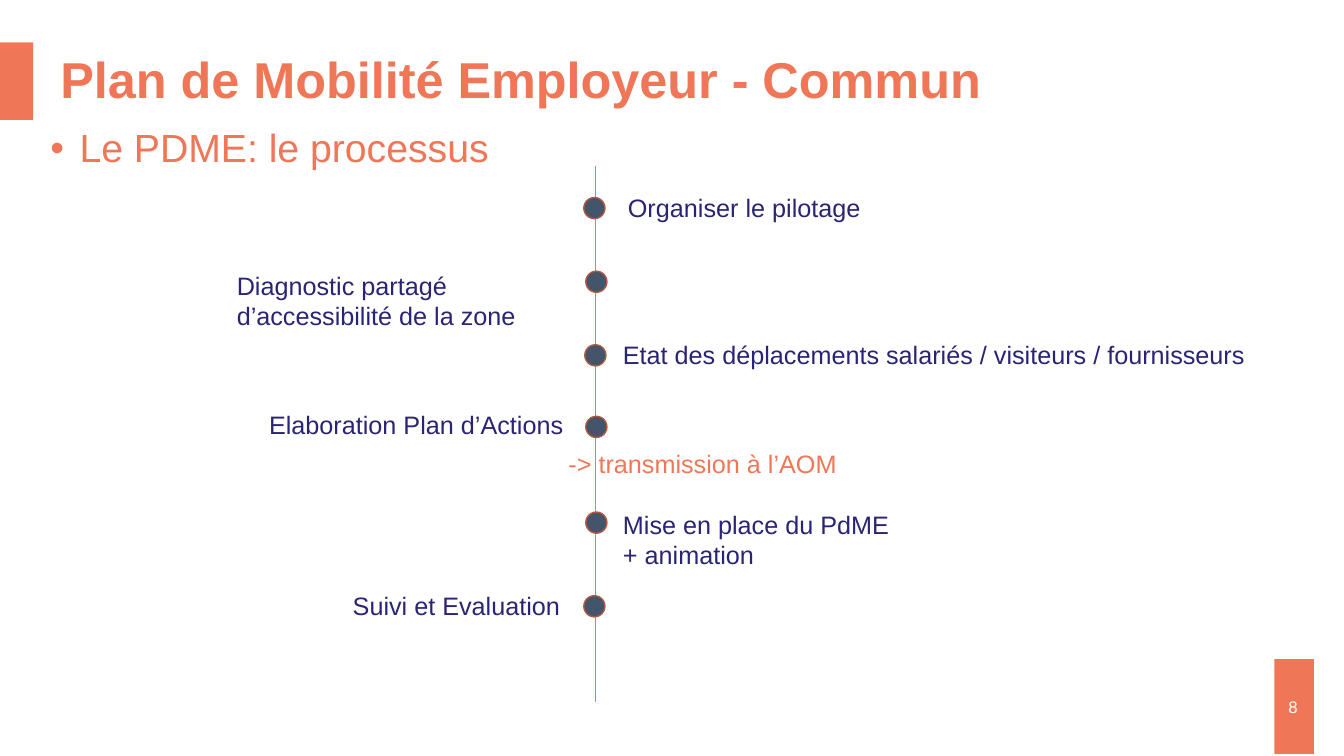
from lxml import etree
from pptx import Presentation
from pptx.dml.color import RGBColor
from pptx.enum import shapes, text
from pptx.oxml import ns
from pptx.util import Inches, Pt

COLORS = {"coral": "EF7757", "navy": "292574", "slate": "44546A",
          "rust": "B15840", "white": "FFFFFF"}
FONT = "Arial"
DOT_SIZE = 0.21

# Each step: dot left and top, then label lines, left, top, width, height, wrap
STEPS = [
    (5.79, 1.96, ["Organiser le pilotage"], 6.13, 1.86, 2.6, 0.4, False),
    (5.81, 2.69, ["Diagnostic partagé", "d’accessibilité de la zone"],
     2.25, 2.63, 2.99, 0.71, False),
    (5.8, 3.42, ["Etat des déplacements salariés / visiteurs / fournisseurs"],
     6.08, 3.32, 6.57, 0.4, False),
    (5.81, 4.13, ["Elaboration Plan d’Actions"], 2.57, 4.01, 3.22, 0.4, False),
    (5.81, 5.08, ["Mise en place du PdME + animation"], 6.08, 5, 2.99, 0.71, True),
    (5.79, 5.91, ["Suivi et Evaluation"], 3.4, 5.81, 2.35, 0.4, False),
]


def color(name):
    return RGBColor.from_string(COLORS[name])


def add_filled_shape(slide, kind, left, top, width, height, fill, line=None):
    shape = slide.shapes.add_shape(
        kind, Inches(left), Inches(top), Inches(width), Inches(height))
    shape.shadow.inherit = False
    shape.fill.solid()
    shape.fill.fore_color.rgb = color(fill)
    if line:
        shape.line.color.rgb = color(line)
        shape.line.width = Pt(1)
    else:
        shape.line.fill.background()
    return shape


def add_text(slide, lines, left, top, width, height, wrap=True, size=18,
             ink="navy", bold=False, anchor=text.MSO_ANCHOR.TOP, **paragraph_format):
    """Add a text box with one paragraph per line and return its paragraphs."""
    box = slide.shapes.add_textbox(
        Inches(left), Inches(top), Inches(width), Inches(height))
    frame = box.text_frame
    frame.word_wrap = wrap
    frame.vertical_anchor = anchor
    frame.text = "\n".join(lines)
    font_format = {"name": FONT, "size": Pt(size), "bold": bold}
    for paragraph in frame.paragraphs:
        for name, value in paragraph_format.items():
            setattr(paragraph, name, value)
        for run in paragraph.runs:
            for name, value in font_format.items():
                setattr(run.font, name, value)
            run.font.color.rgb = color(ink)
    return frame.paragraphs


def set_indent(paragraph, margin, first_line=0, bullet=None):
    properties = paragraph._p.get_or_add_pPr()
    properties.set("marL", str(Inches(margin)))
    properties.set("indent", str(Inches(first_line)))
    if bullet:
        etree.SubElement(properties, ns.qn("a:buFont")).set("typeface", FONT)
        etree.SubElement(properties, ns.qn("a:buChar")).set("char", bullet)


def add_timeline_axis(slide, x, top, bottom):
    axis = slide.shapes.add_connector(
        shapes.MSO_CONNECTOR.STRAIGHT, Inches(x), Inches(top), Inches(x), Inches(bottom))
    axis.line.color.rgb = color("coral")
    axis.line.width = Pt(0.5)
    etree.SubElement(axis._element.spPr, ns.qn("a:effectLst"))


def add_step(slide, dot_left, dot_top, lines, left, top, width, height, wrap):
    add_filled_shape(slide, shapes.MSO_SHAPE.OVAL, dot_left, dot_top,
                     DOT_SIZE, DOT_SIZE, "slate", "rust")
    add_text(slide, lines, left, top, width, height, wrap)


def main():
    presentation = Presentation()
    presentation.slide_width = Inches(13.33)
    presentation.slide_height = Inches(7.5)
    slide = presentation.slides.add_slide(presentation.slide_layouts[6])

    rectangle = shapes.MSO_SHAPE.RECTANGLE
    middle = text.MSO_ANCHOR.MIDDLE
    add_filled_shape(slide, rectangle, 12.64, 6.54, 0.39, 0.94, "coral")
    add_filled_shape(slide, rectangle, 0, 0.42, 0.33, 0.77, "coral")
    add_text(slide, ["Plan de Mobilité Employeur - Commun"], 0.5, 0.47, 11.92, 0.69,
             size=36, ink="coral", bold=True, anchor=middle, line_spacing=0.9)
    subtitle = add_text(slide, ["Le PDME: le processus"], 0.4, 1.23, 5.51, 0.73,
                        size=28, ink="coral", line_spacing=0.9)
    set_indent(subtitle[0], 0.29, -0.29, "•")
    add_text(slide, ["8"], 12.63, 6.81, 0.39, 0.4, size=12, ink="white",
             anchor=middle, alignment=text.PP_ALIGN.CENTER)

    add_timeline_axis(slide, 5.9, 1.65, 6.96)
    for step in STEPS:
        add_step(slide, *step)
    transmission = add_text(slide, ["-> transmission à l’AOM"], 4.54, 4.4, 4.76, 0.4,
                            ink="coral", level=2)
    set_indent(transmission[0], 1)

    presentation.save("out.pptx")


if __name__ == "__main__":
    main()
